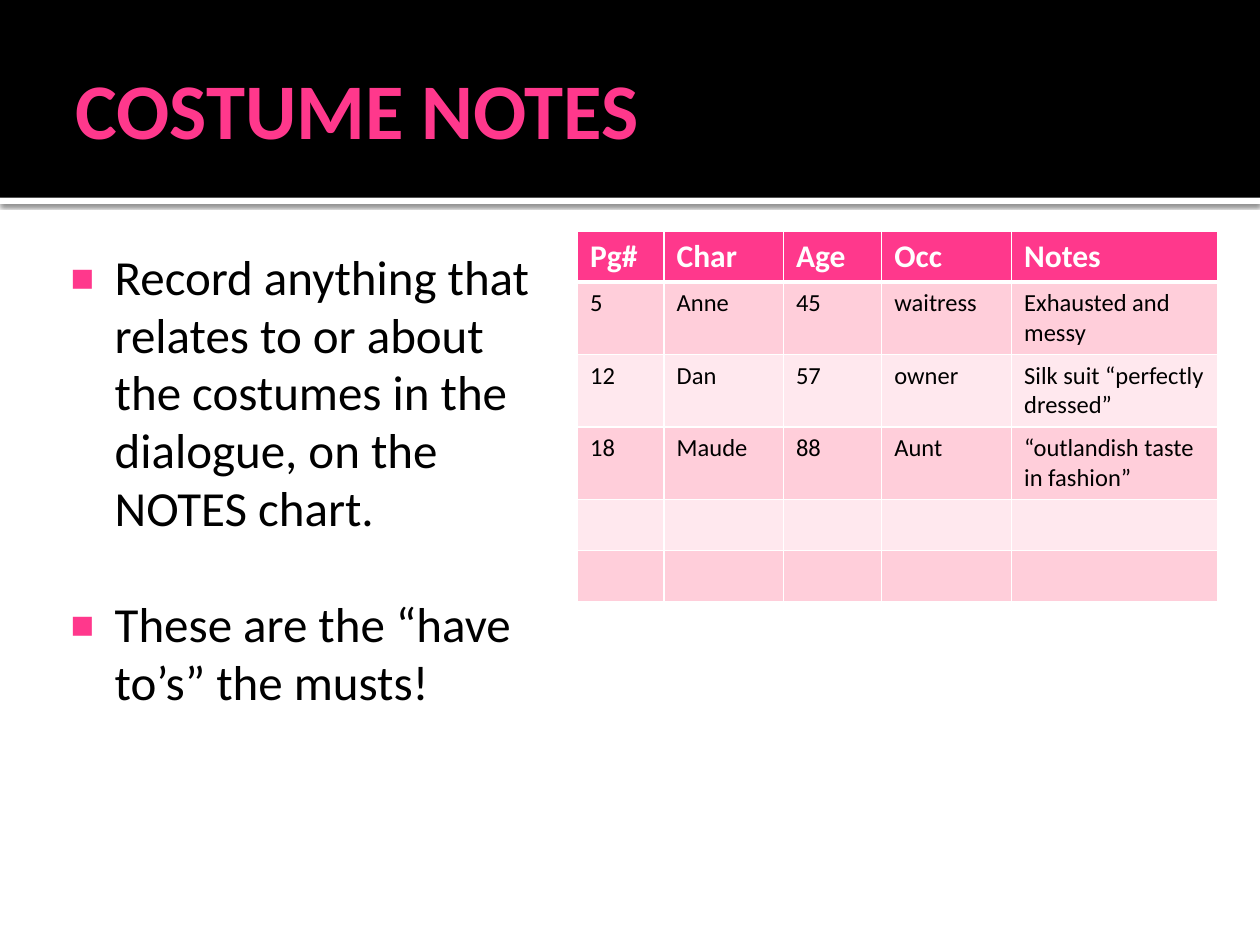
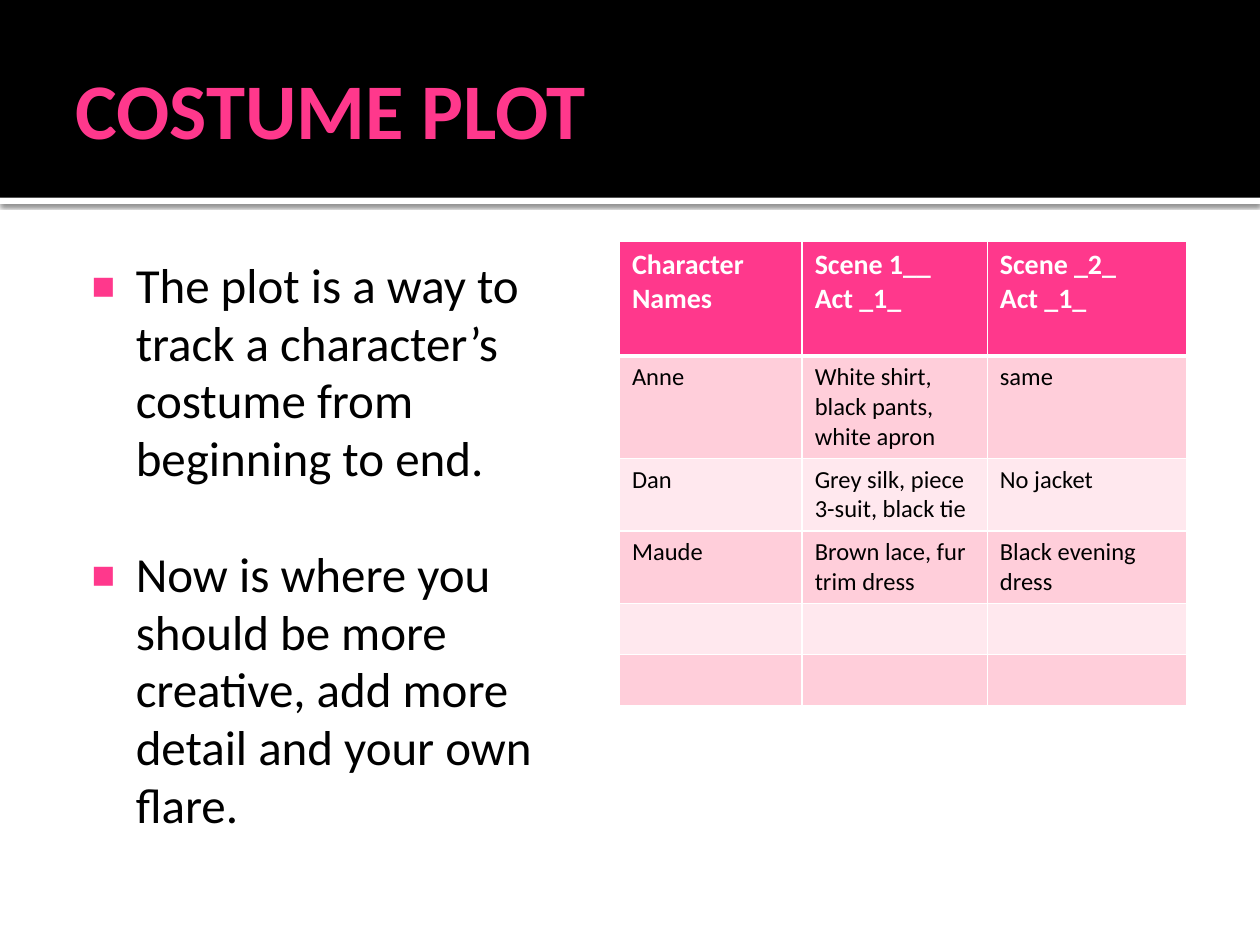
from lxml import etree
from pptx import Presentation
from pptx.dml.color import RGBColor
from pptx.enum.shapes import MSO_SHAPE
from pptx.enum.text import MSO_ANCHOR
from pptx.oxml import parse_xml
from pptx.oxml.ns import nsdecls, qn
from pptx.util import Pt

RECTANGLE = MSO_SHAPE.RECTANGLE
TOP, MIDDLE = MSO_ANCHOR.TOP, MSO_ANCHOR.MIDDLE

COLOURS = {
    "accent": "FF388C",
    "band": "000000",
    "paper": "FFFFFF",
    "ink": "000000",
    "odd row": "FFCEDA",
    "even row": "FFE8EE",
}
FONT = "Calibri"
SLIDE_WIDTH, SLIDE_HEIGHT = 720, 540
BAND_HEIGHT = 113
STRIP_HEIGHT = 3.6
BODY_LINE = 33.5
# Row heights by the number of text lines; empty rows take the single height.
ROW_HEIGHT = {1: 29.2, 2: 41.4, 3: 58.5}


def rgb(name):
    return RGBColor.from_string(COLOURS[name])


class CostumeDeck:
    """Holds the deck's style and the slide being filled."""

    def __init__(self):
        self.deck = Presentation()
        self.deck.slide_width = Pt(SLIDE_WIDTH)
        self.deck.slide_height = Pt(SLIDE_HEIGHT)
        self.slide = None

    def start_slide(self, title):
        self.slide = self.deck.slides.add_slide(self.deck.slide_layouts[6])
        strip = self.bar(BAND_HEIGHT, STRIP_HEIGHT, "paper")
        self.cast_shadow(strip)
        self.bar(0, BAND_HEIGHT, "band")
        frame = self.text_frame((36, 12.2, 648, 98.6), (7.2, 3.6, 3.6, 3.6), MIDDLE)
        frame.text = title
        self.style(frame.paragraphs[0], 45, "accent", True)

    def bar(self, top, height, colour):
        """Add a plain rectangle across the full slide width."""
        bar = self.slide.shapes.add_shape(
            RECTANGLE, 0, Pt(top), Pt(SLIDE_WIDTH), Pt(height))
        bar.shadow.inherit = False
        bar.fill.solid()
        bar.fill.fore_color.rgb = rgb(colour)
        bar.line.fill.background()
        return bar

    def cast_shadow(self, shape):
        effects = shape.element.spPr.find(qn("a:effectLst"))
        effects.append(parse_xml(
            f'<a:outerShdw {nsdecls("a")} blurRad="{Pt(2.5)}" dist="{Pt(0.8)}" '
            f'dir="5400000" algn="t" rotWithShape="0"><a:srgbClr val="{COLOURS["ink"]}">'
            '<a:alpha val="60000"/></a:srgbClr></a:outerShdw>'))

    def text_frame(self, box, insets, anchor):
        frame = self.slide.shapes.add_textbox(*map(Pt, box)).text_frame
        frame.word_wrap = True
        frame.vertical_anchor = anchor
        (frame.margin_left, frame.margin_top,
         frame.margin_right, frame.margin_bottom) = map(Pt, insets)
        return frame

    def style(self, paragraph, size, colour, bold=False):
        font = paragraph.font
        font.name, font.size, font.bold = FONT, Pt(size), bold
        font.color.rgb = rgb(colour)

    def bullets(self, box, points):
        """Add bulleted points, one line apart."""
        frame = self.text_frame(box, (7.2, 7.2, 7.2, 3.6), TOP)
        for index, point in enumerate(points):
            paragraph = frame.add_paragraph() if index else frame.paragraphs[0]
            paragraph.text = point
            paragraph.line_spacing = 0.98
            paragraph.space_before = Pt(BODY_LINE if index else 0)
            self.mark(paragraph)
            self.style(paragraph, 28, "ink")

    def mark(self, paragraph):
        """Give a paragraph its hanging indent and square bullet."""
        properties = paragraph._p.get_or_add_pPr()
        properties.set("marL", str(Pt(34.5)))
        properties.set("indent", str(Pt(-25.2)))
        colour = etree.SubElement(properties, qn("a:buClr"))
        etree.SubElement(colour, qn("a:srgbClr"), val=COLOURS["accent"])
        etree.SubElement(properties, qn("a:buSzPct"), val="80000")
        etree.SubElement(properties, qn("a:buFont"), typeface="Arial")
        etree.SubElement(properties, qn("a:buChar"), char="■")

    def table(self, left, top, widths, heights, rows, header_size):
        """Add a table; rows beyond those given stay empty."""
        table = self.slide.shapes.add_table(
            len(heights), len(widths), Pt(left), Pt(top),
            Pt(sum(widths)), Pt(sum(heights))).table
        table.horz_banding = False
        for column, width in zip(table.columns, widths):
            column.width = Pt(width)
        for index, height in enumerate(heights):
            table.rows[index].height = Pt(height)
            texts = rows[index] if index < len(rows) else [""] * len(widths)
            for cell, text in zip(table.rows[index].cells, texts):
                self.cell(cell, text, index, header_size)

    def cell(self, cell, text, row, header_size):
        self.borders(cell, row)
        cell.fill.solid()
        cell.fill.fore_color.rgb = rgb(
            "accent" if row == 0 else "odd row" if row % 2 else "even row")
        if not text:
            return
        cell.text = text
        for paragraph in cell.text_frame.paragraphs:
            if row == 0:
                self.style(paragraph, header_size, "paper", True)
            else:
                self.style(paragraph, 14, "ink")

    def borders(self, cell, row):
        """Draw thin rules, with a thick one under the header."""
        properties = cell._tc.get_or_add_tcPr()
        widths = {"L": 1, "R": 1, "T": 3 if row == 1 else 1, "B": 3 if row == 0 else 1}
        for side, width in widths.items():
            line = etree.SubElement(properties, qn(f"a:ln{side}"), w=str(Pt(width)))
            fill = etree.SubElement(line, qn("a:solidFill"))
            etree.SubElement(fill, qn("a:srgbClr"), val=COLOURS["paper"])


def costume_notes(deck):
    deck.start_slide("COSTUME NOTES")
    deck.bullets((24, 135.4, 294, 273), [
        "Record anything that relates to or about the costumes in the dialogue, "
        "on the NOTES chart.",
        "These are the “have to’s” the musts!",
    ])
    heights = [ROW_HEIGHT[lines] for lines in (1, 2, 2, 2, 1, 1)]
    deck.table(330, 132, [49.5, 68.2, 56.2, 74.2, 117.9], heights, [
        ["Pg#", "Char", "Age", "Occ", "Notes"],
        ["5", "Anne", "45", "waitress", "Exhausted and messy"],
        ["12", "Dan", "57", "owner", "Silk suit “perfectly dressed”"],
        ["18", "Maude", "88", "Aunt", "“outlandish taste in fashion”"],
    ], 18)


def costume_plot(deck):
    deck.start_slide("COSTUME PLOT")
    deck.bullets((36, 139.8, 300, 364), [
        "The plot is a way to track a character’s costume from beginning to end.",
        "Now is where you should be more creative, add more detail and your own flare.",
    ])
    header_height = 65.5
    heights = [header_height] + [ROW_HEIGHT[lines] for lines in (3, 2, 2, 1, 1)]
    deck.table(354, 138, [104.4, 105.8, 113.8], heights, [
        ["Character\nNames", "Scene 1__\vAct _1_", "Scene _2_\nAct _1_"],
        ["Anne", "White shirt, black pants, white apron", "same"],
        ["Dan", "Grey silk, piece 3-suit, black tie", "No jacket"],
        ["Maude", "Brown lace, fur trim dress", "Black evening dress"],
    ], 16)


def main():
    costume_deck = CostumeDeck()
    costume_notes(costume_deck)
    costume_plot(costume_deck)
    costume_deck.deck.save("out.pptx")


if __name__ == "__main__":
    main()
